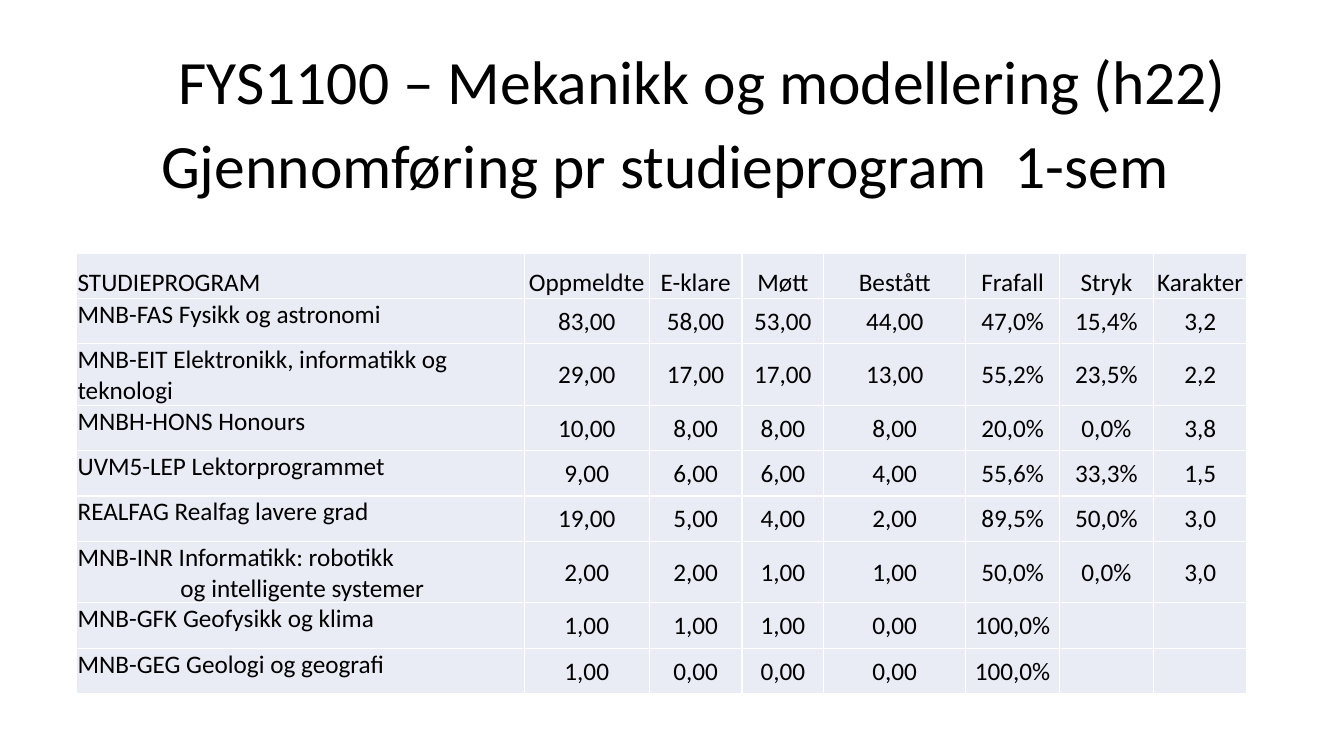
from dataclasses import dataclass

from lxml import etree
from pptx import Presentation
from pptx.dml.color import RGBColor
from pptx.enum.text import MSO_ANCHOR, MSO_AUTO_SIZE, PP_ALIGN
from pptx.oxml.ns import qn
from pptx.util import Inches, Pt

CENTER, LEFT = PP_ALIGN.CENTER, PP_ALIGN.LEFT
TOP, MIDDLE, BOTTOM = MSO_ANCHOR.TOP, MSO_ANCHOR.MIDDLE, MSO_ANCHOR.BOTTOM
FIT_SHAPE = MSO_AUTO_SIZE.SHAPE_TO_FIT_TEXT


@dataclass(frozen=True)
class Theme:
    font: str = "Calibri"
    ink: str = "000000"
    cell: str = "E9EBF5"
    border: str = "FFFFFF"
    border_width: float = 1
    heading_size: int = 44
    table_size: int = 18


THEME = Theme()

COURSE = "FYS1100 – Mekanikk og modellering (h22)"
TOPIC = "Gjennomføring pr studieprogram  1-sem"
COLUMN_WIDTHS = [4.44, 1.24, 0.92, 0.81, 1.41, 0.93, 0.93, 0.93]
ROW_HEIGHT, TALL_ROW_HEIGHT = 0.45, 0.6
TALL_ROWS = {2, 6}
CONTINUATION_INDENT = 1.02
PROGRAMMES = [
    ["STUDIEPROGRAM", "Oppmeldte", "E-klare", "Møtt", "Bestått", "Frafall", "Stryk", "Karakter"],
    ["MNB-FAS Fysikk og astronomi", "83,00", "58,00", "53,00", "44,00", "47,0%", "15,4%", "3,2"],
    ["MNB-EIT Elektronikk, informatikk og teknologi",
     "29,00", "17,00", "17,00", "13,00", "55,2%", "23,5%", "2,2"],
    ["MNBH-HONS Honours", "10,00", "8,00", "8,00", "8,00", "20,0%", "0,0%", "3,8"],
    ["UVM5-LEP Lektorprogrammet", "9,00", "6,00", "6,00", "4,00", "55,6%", "33,3%", "1,5"],
    ["REALFAG Realfag lavere grad", "19,00", "5,00", "4,00", "2,00", "89,5%", "50,0%", "3,0"],
    ["MNB-INR Informatikk: robotikk\nog intelligente systemer",
     "2,00", "2,00", "1,00", "1,00", "50,0%", "0,0%", "3,0"],
    ["MNB-GFK Geofysikk og klima", "1,00", "1,00", "1,00", "0,00", "100,0%", "", ""],
    ["MNB-GEG Geologi og geografi", "1,00", "0,00", "0,00", "0,00", "100,0%", "", ""],
]


def style_paragraph(paragraph, size, align=LEFT):
    paragraph.alignment = align
    paragraph.font.name = THEME.font
    paragraph.font.size = Pt(size)
    paragraph.font.color.rgb = RGBColor.from_string(THEME.ink)


def add_heading(slide, left, top, width, height, text, wrap=True):
    heading = slide.shapes.add_textbox(
        Inches(left), Inches(top), Inches(width), Inches(height)).text_frame
    heading.word_wrap = wrap
    heading.auto_size = FIT_SHAPE
    heading.text = text
    style_paragraph(heading.paragraphs[0], THEME.heading_size)


def add_borders(cell):
    properties = cell._tc.get_or_add_tcPr()
    for position, side in enumerate(("lnL", "lnR", "lnT", "lnB")):
        line = etree.Element(qn(f"a:{side}"), w=str(Pt(THEME.border_width)))
        fill = etree.SubElement(line, qn("a:solidFill"))
        etree.SubElement(fill, qn("a:srgbClr"), val=THEME.border)
        properties.insert(position, line)


def fill_cell(cell, text, align, anchor):
    cell.text = text
    cell.vertical_anchor = anchor
    cell.margin_left = cell.margin_right = cell.margin_top = Inches(0.01)
    cell.margin_bottom = 0
    cell.fill.solid()
    cell.fill.fore_color.rgb = RGBColor.from_string(THEME.cell)
    add_borders(cell)
    first, *continuations = cell.text_frame.paragraphs
    style_paragraph(first, THEME.table_size, align)
    for continuation in continuations:
        style_paragraph(continuation, THEME.table_size, align)
        continuation._p.get_or_add_pPr().set("marL", str(Inches(CONTINUATION_INDENT)))


def add_programme_table(slide, left, top):
    heights = [TALL_ROW_HEIGHT if row in TALL_ROWS else ROW_HEIGHT
               for row in range(len(PROGRAMMES))]
    table = slide.shapes.add_table(
        len(heights), len(COLUMN_WIDTHS), Inches(left), Inches(top),
        Inches(sum(COLUMN_WIDTHS)), Inches(sum(heights))).table
    table.first_row = table.horz_banding = False
    for column, width in zip(table.columns, COLUMN_WIDTHS):
        column.width = Inches(width)
    for row, height in zip(table.rows, heights):
        row.height = Inches(height)
    for row, programme in enumerate(PROGRAMMES):
        for column, text in enumerate(programme):
            align = CENTER if column else LEFT
            anchor = BOTTOM if row == 0 else MIDDLE if column else TOP
            fill_cell(table.cell(row, column), text, align, anchor)


def main():
    presentation = Presentation()
    presentation.slide_width, presentation.slide_height = Inches(13.33), Inches(7.5)
    slide = presentation.slides.add_slide(presentation.slide_layouts[6])
    add_heading(slide, 1.67, 0.38, 10.7, 0.84, COURSE, wrap=False)
    add_heading(slide, 1.5, 1.21, 10.88, 0.84, TOPIC)
    add_programme_table(slide, 0.76, 2.51)
    presentation.save("out.pptx")


if __name__ == "__main__":
    main()
